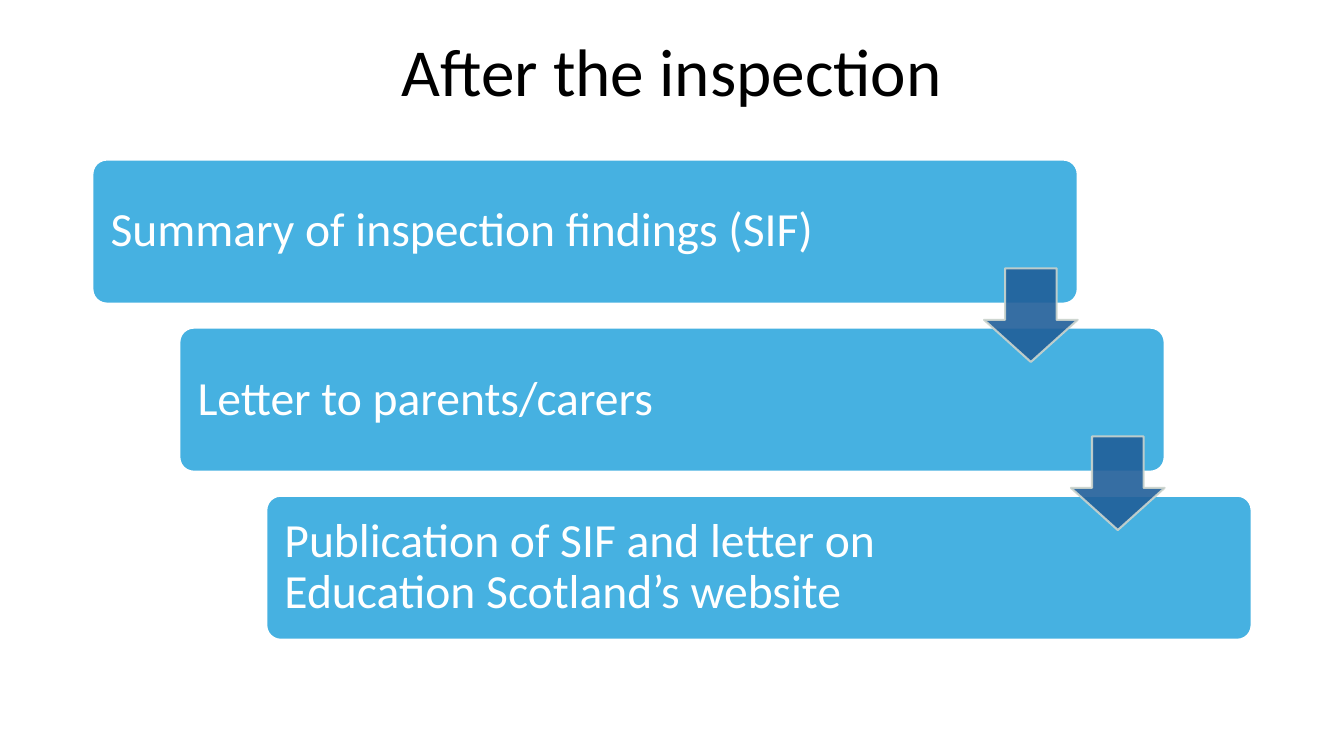
import dataclasses

import pptx
import pptx.dml.color
import pptx.enum.shapes
import pptx.enum.text
import pptx.oxml
import pptx.oxml.ns
import pptx.util

Pt = pptx.util.Pt
SHAPES = pptx.enum.shapes.MSO_SHAPE
ALIGN = pptx.enum.text.PP_ALIGN


@dataclasses.dataclass(frozen=True)
class Theme:
    font: str = "Calibri"
    title_size: float = 48
    step_size: float = 34
    outline: float = 1.5
    black: str = "000000"
    white: str = "FFFFFF"
    card: str = "46B1E1"
    arrow: str = "215F9A"
    arrow_line: str = "CCD4CD"
    arrow_opacity: int = 90


@dataclasses.dataclass(frozen=True)
class Box:
    left: float
    top: float
    width: float
    height: float

    def lengths(self):
        return [Pt(value) for value in dataclasses.astuple(self)]


THEME = Theme()
STEPS = [
    "Summary of inspection findings (SIF)",
    "Letter to parents/carers",
    "Publication of SIF and letter on Education Scotland’s website",
]


def rgb(color):
    return pptx.dml.color.RGBColor.from_string(color)


def write_text(frame, text, *, size, color, align, insets=None):
    frame.word_wrap = True
    frame.auto_size = pptx.enum.text.MSO_AUTO_SIZE.NONE
    frame.vertical_anchor = pptx.enum.text.MSO_ANCHOR.MIDDLE
    if insets:
        (frame.margin_left, frame.margin_top,
         frame.margin_right, frame.margin_bottom) = [Pt(value) for value in insets]
    para = frame.paragraphs[0]
    para.alignment = align
    para.line_spacing = 0.9
    span = para.add_run()
    span.text = text
    span.font.name = THEME.font
    span.font.size = Pt(size)
    span.font.color.rgb = rgb(color)


def set_opacity(fill, percent):
    """Make a solid fill partly transparent."""
    color = fill._xPr.find(".//" + pptx.oxml.ns.qn("a:srgbClr"))
    alpha = pptx.oxml.parse_xml(
        f'<a:alpha {pptx.oxml.ns.nsdecls("a")} val="{percent * 1000}"/>')
    color.append(alpha)


def add_block(page, kind, box, *, fill, line, adjustments):
    shape = page.shapes.add_shape(kind, *box.lengths())
    shape.shadow.inherit = False
    for index, value in enumerate(adjustments):
        shape.adjustments[index] = value
    shape.fill.solid()
    shape.fill.fore_color.rgb = rgb(fill)
    shape.line.color.rgb = rgb(line)
    shape.line.width = Pt(THEME.outline)
    return shape


def add_title(page, box):
    title = page.shapes.title
    title.left, title.top, title.width, title.height = box.lengths()
    write_text(title.text_frame, "After the inspection", size=THEME.title_size,
               color=THEME.black, align=ALIGN.CENTER)


def add_staircase(page, box, steps):
    """Cards stepping down to the right, with an arrow from each to the next."""
    card_width, card_height = box.width * 0.85, box.height * 0.3
    step_x = (box.width - card_width) / (len(steps) - 1)
    step_y = (box.height - card_height) / (len(steps) - 1)
    arrow_size = card_height * 0.65
    cards = [Box(box.left + index * step_x, box.top + index * step_y,
                 card_width, card_height) for index in range(len(steps))]

    # Cards
    for card, text in zip(cards, steps):
        shape = add_block(page, SHAPES.ROUNDED_RECTANGLE, card, fill=THEME.card,
                          line=THEME.white, adjustments=[0.1])
        write_text(shape.text_frame, text, size=THEME.step_size, color=THEME.white,
                   align=ALIGN.LEFT, insets=(10, 10, 139, 10))

    # Arrows, flush with the right side of the upper card
    for card in cards[:-1]:
        place = Box(card.left + card.width - arrow_size,
                    card.top + card.height * 0.755, arrow_size, arrow_size)
        arrow = add_block(page, SHAPES.DOWN_ARROW, place, fill=THEME.arrow,
                          line=THEME.arrow_line, adjustments=[0.55, 0.45])
        set_opacity(arrow.fill, THEME.arrow_opacity)
        set_opacity(arrow.line.fill, THEME.arrow_opacity)


def main():
    deck = pptx.Presentation()
    deck.slide_width, deck.slide_height = Pt(960), Pt(540)
    page = deck.slides.add_slide(deck.slide_layouts.get_by_name("Title Only"))
    add_title(page, Box(66, 9, 828, 89))
    add_staircase(page, Box(66, 114, 828, 343), STEPS)
    deck.save("out.pptx")


if __name__ == "__main__":
    main()
